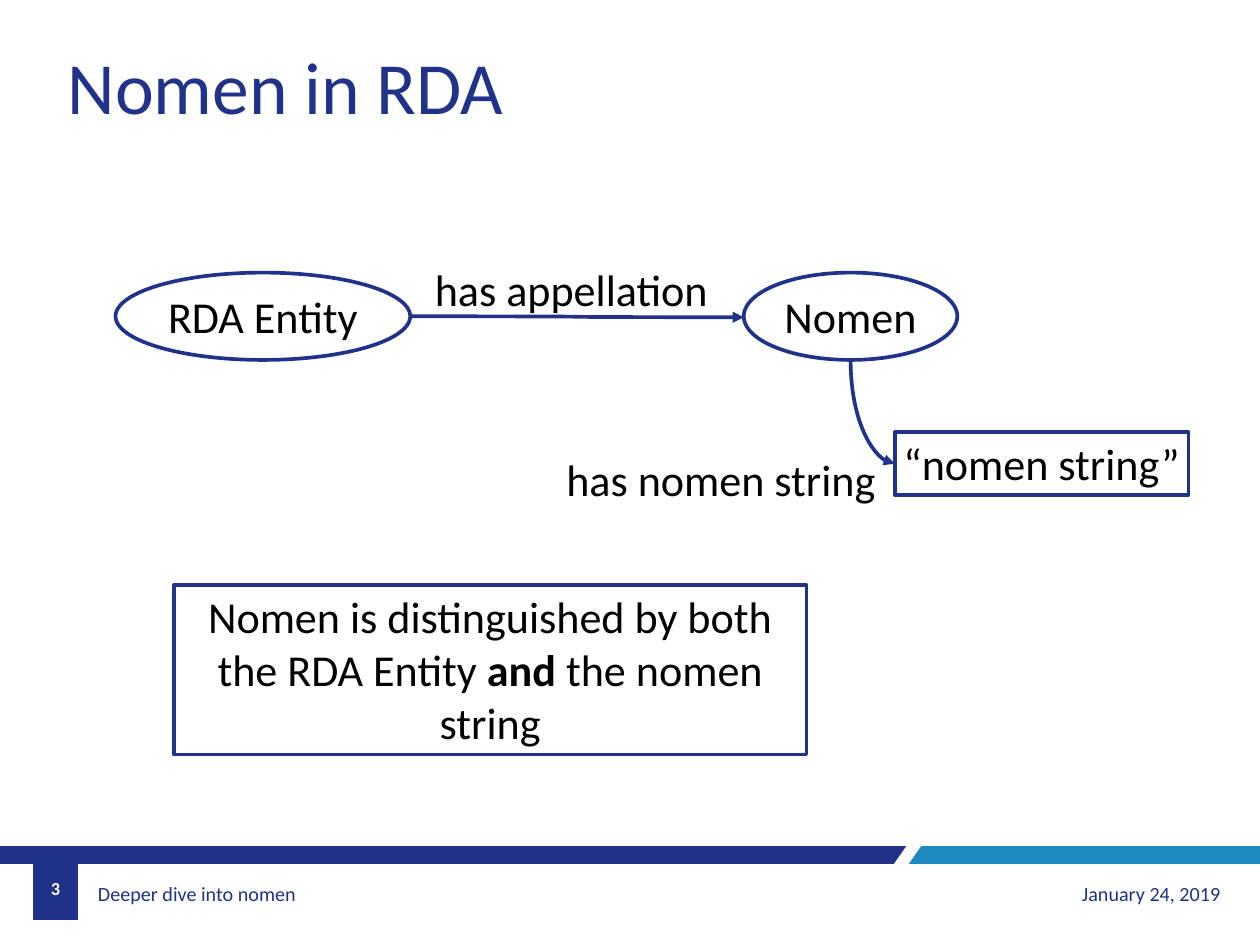
import pptx
import pptx.dml.color
import pptx.enum.shapes
import pptx.enum.text
import pptx.util
import lxml.etree

SHAPES = pptx.enum.shapes.MSO_SHAPE
ALIGN = pptx.enum.text.PP_ALIGN
ANCHOR = pptx.enum.text.MSO_ANCHOR
FONT, INK, NAVY, BAND, SKY, WHITE = "Calibri", "000000", "21328A", "203189", "1D8BC1", "FFFFFF"
WIDTH, HEIGHT = 14.28, 10.71
BAND_TOP, BAND_END = 89.54, 91.41

BANDS = [
    (BAND, [(71.92, BAND_TOP), (0, BAND_TOP), (0, BAND_END), (70.94, BAND_END)]),
    (SKY, [(100, BAND_TOP), (73.11, BAND_TOP), (72.13, BAND_END), (100, BAND_END)]),
    (BAND, [(2.59, 97.39), (6.23, 97.39), (6.23, BAND_TOP), (2.59, BAND_TOP)]),
]
FOOTERS = [
    ("Deeper dive into nomen", (7.28, 91.97, 28.15, 5.14), 16.4, BAND, ALIGN.LEFT, 0.07, False),
    ("January 24, 2019", (71.92, 91.97, 25.63, 5.14), 16.4, BAND, ALIGN.RIGHT, 0.1, False),
    ("3", (2.59, BAND_END, 3.64, 5.14), 14.9, WHITE, ALIGN.CENTER, 0.1, True),
]
TITLE = ("Nomen in RDA", (4.69, 3.83, 43.56, 11.39))
ENTITY = (9.17, 28.85, 23.39, 9.24)
NOMEN = (59.03, 28.85, 16.95, 9.24)
STRING = (71.01, 45.75, 23.32, 6.63)
NODES = [
    (SHAPES.OVAL, ENTITY, [("RDA Entity", False)], False),
    (SHAPES.OVAL, NOMEN, [("Nomen", False)], False),
    (SHAPES.RECTANGLE, STRING, [("“nomen string”", False)], False),
    (SHAPES.RECTANGLE, (13.8, 61.9, 50.21, 17.93),
     [("Nomen is distinguished by both the RDA Entity ", False), ("and", True),
      (" the nomen string", False)], True),
]
LABELS = [
    ("has appellation", (33.68, 27.26, 23.32, 6.63)),
    ("has nomen string", (44.12, 47.43, 26.19, 6.63)),
]


def across(share):
    return pptx.util.Inches(WIDTH * share / 100)


def down(share):
    return pptx.util.Inches(HEIGHT * share / 100)


def place(area):
    left, top, width, height = area
    return across(left), down(top), across(width), down(height)


def color(code):
    return pptx.dml.color.RGBColor.from_string(code)


def write(box, spans, size, ink, align, anchor=ANCHOR.TOP, wrap=False, inset=0.1):
    frame = box.text_frame
    frame.word_wrap = wrap
    frame.vertical_anchor = anchor
    frame.margin_left = frame.margin_right = pptx.util.Inches(inset)
    frame.margin_top = frame.margin_bottom = pptx.util.Inches(inset / 2)
    para = frame.paragraphs[0]
    para.alignment = align
    for words, bold in spans:
        span = para.add_run()
        span.text = words
        span.font.name = FONT
        span.font.size = pptx.util.Pt(size)
        span.font.bold = bold
        span.font.color.rgb = color(ink)


def outline(item):
    item.line.color.rgb = color(NAVY)
    item.line.width = pptx.util.Pt(3)


def add_band(page, fill, corners):
    points = [(across(x), down(y)) for x, y in corners]
    builder = page.shapes.build_freeform(*points[0])
    builder.add_line_segments(points[1:], close=True)
    band = builder.convert_to_shape()
    band.shadow.inherit = False
    band.fill.solid()
    band.fill.fore_color.rgb = color(fill)
    band.line.fill.background()


def add_node(page, kind, area, spans, wrap):
    node = page.shapes.add_shape(kind, *place(area))
    node.shadow.inherit = False
    node.fill.background()
    outline(node)
    write(node, spans, 36, INK, ALIGN.CENTER, wrap=wrap)


def add_arrow(page, start_x, start_y, end_x, end_y):
    arrow = page.shapes.add_connector(
        pptx.enum.shapes.MSO_CONNECTOR.CURVE, start_x, start_y, end_x, end_y)
    outline(arrow)
    space = pptx.oxml.ns.qn
    lxml.etree.SubElement(arrow.line._get_or_add_ln(), space("a:tailEnd"), type="triangle")
    lxml.etree.SubElement(arrow._element.spPr, space("a:effectLst"))
    return arrow


def add_quarter_arrow(page, start_x, start_y, end_x, end_y):
    middle_x, middle_y = (start_x + end_x) // 2, (start_y + end_y) // 2
    half_run, half_rise = (end_y - start_y) // 2, (end_x - start_x) // 2
    arrow = add_arrow(page, middle_x - half_run, middle_y - half_rise,
                      middle_x + half_run, middle_y + half_rise)
    properties = arrow._element.spPr
    frame = properties.find(pptx.oxml.ns.qn("a:xfrm"))
    frame.set("rot", str(270 * 60000))
    frame.set("flipH", "1")
    properties.find(pptx.oxml.ns.qn("a:prstGeom")).set("prst", "curvedConnector2")


def main():
    deck = pptx.Presentation()
    deck.slide_width, deck.slide_height = across(100), down(100)
    page = deck.slides.add_slide(deck.slide_layouts[6])

    for fill, corners in BANDS:
        add_band(page, fill, corners)
    for words, area, size, ink, align, inset, bold in FOOTERS:
        box = page.shapes.add_textbox(*place(area))
        write(box, [(words, bold)], size, ink, align, ANCHOR.MIDDLE, True, inset)

    words, area = TITLE
    write(page.shapes.add_textbox(*place(area)), [(words, False)], 60, NAVY, ALIGN.LEFT)
    for kind, area, spans, wrap in NODES:
        add_node(page, kind, area, spans, wrap)
    for words, area in LABELS:
        box = page.shapes.add_textbox(*place(area))
        write(box, [(words, False)], 36, INK, ALIGN.CENTER)

    entity_left, entity_top, entity_width, entity_height = ENTITY
    nomen_left, nomen_top, nomen_width, nomen_height = NOMEN
    string_left, string_top, _, string_height = STRING
    add_arrow(page, across(entity_left + entity_width), down(entity_top + entity_height / 2),
              across(nomen_left), down(nomen_top + nomen_height / 2 + 0.1))
    add_quarter_arrow(page, across(nomen_left + nomen_width / 2), down(nomen_top + nomen_height),
                      across(string_left), down(string_top + string_height / 2))
    deck.save("out.pptx")


if __name__ == "__main__":
    main()
